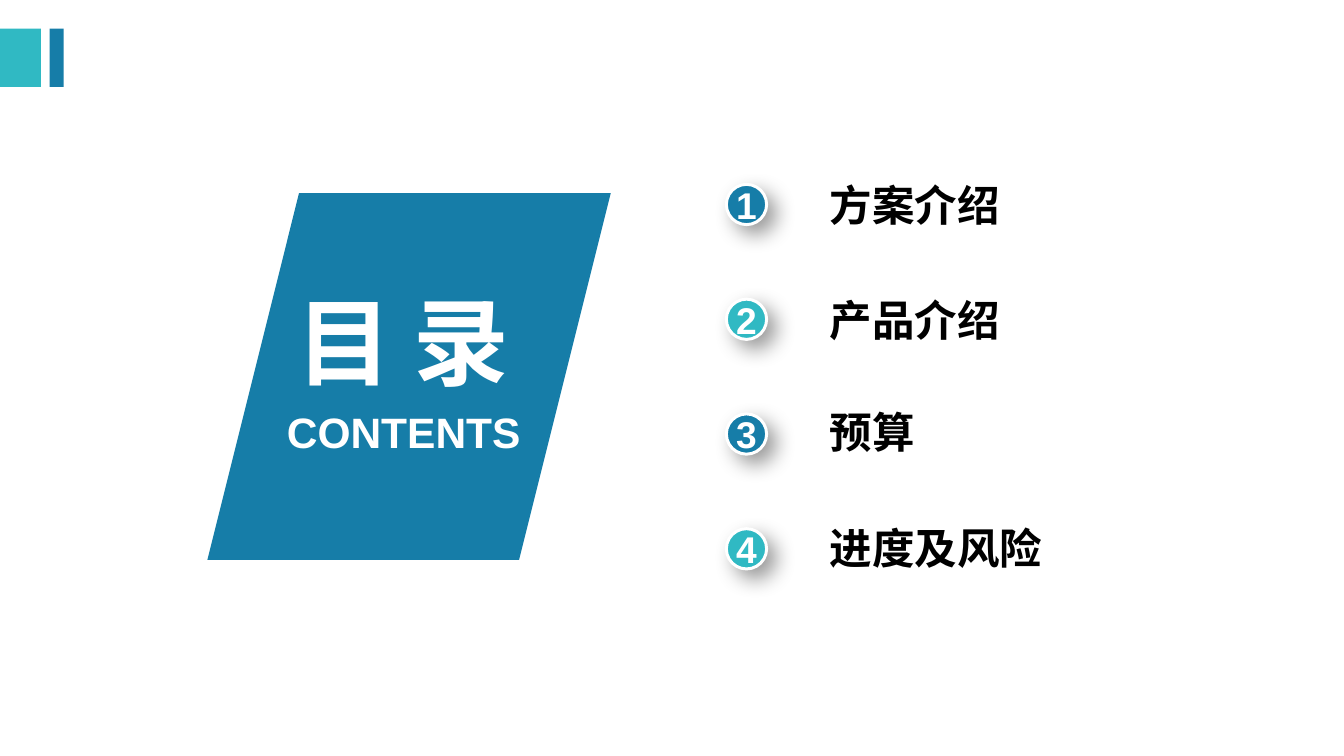
from dataclasses import dataclass

from lxml import etree
from pptx import Presentation
from pptx.dml.color import RGBColor
from pptx.enum.lang import MSO_LANGUAGE_ID
from pptx.enum.shapes import MSO_SHAPE
from pptx.enum.text import MSO_ANCHOR, MSO_AUTO_SIZE, PP_ALIGN
from pptx.oxml.ns import qn
from pptx.util import Cm, Pt

RECT = MSO_SHAPE.RECTANGLE
SLANT = MSO_SHAPE.PARALLELOGRAM
OVAL = MSO_SHAPE.OVAL
MIDDLE = MSO_ANCHOR.MIDDLE
FIT = MSO_AUTO_SIZE.SHAPE_TO_FIT_TEXT
LEFT = PP_ALIGN.LEFT
CENTER = PP_ALIGN.CENTER
CHINESE = MSO_LANGUAGE_ID.SIMPLIFIED_CHINESE


@dataclass(frozen=True)
class Theme:
    blue: str = "167DA8"
    teal: str = "30B9C3"
    white: str = "FFFFFF"
    black: str = "000000"
    font: str = "Arial"
    title: int = 72
    label: int = 32
    digit: int = 28
    rim: float = 2.25


THEME = Theme()
ITEMS = [
    ("方案介绍", 4.75, 9.83),
    ("产品介绍", 7.8, 7.29),
    ("预算", 10.77, 7.29),
    ("进度及风险", 13.87, 7.29),
]


def place(box):
    return [Cm(side) for side in box]


def write(shape, text, size, color, align):
    frame = shape.text_frame
    frame.text = text
    frame.word_wrap = True
    frame.vertical_anchor = MIDDLE
    frame.margin_left = frame.margin_right = 0
    frame.margin_top = frame.margin_bottom = 0
    line = frame.paragraphs[0]
    line.alignment = align
    font = line.runs[0].font
    font.name = THEME.font
    font.size = Pt(size)
    font.bold = True
    font.color.rgb = RGBColor.from_string(color)
    font.language_id = CHINESE


def add_block(slide, kind, box, color):
    block = slide.shapes.add_shape(kind, *place(box))
    block.shadow.inherit = False
    block.fill.solid()
    block.fill.fore_color.rgb = RGBColor.from_string(color)
    block.line.fill.background()
    return block


def add_label(slide, box, text, size, color, align):
    label = slide.shapes.add_textbox(*place(box))
    write(label, text, size, color, align)
    label.text_frame.auto_size = FIT


def add_shade(shape):
    effects = shape._element.spPr.find(qn("a:effectLst"))
    shade = etree.SubElement(
        effects, qn("a:outerShdw"), blurRad=str(Pt(16)), dist=str(Pt(9)),
        dir="2700000", algn="tl", rotWithShape="0")
    color = etree.SubElement(shade, qn("a:srgbClr"), val=THEME.black)
    etree.SubElement(color, qn("a:alpha"), val="40000")


def add_badge(slide, box, text, color):
    badge = add_block(slide, OVAL, box, color)
    badge.line.color.rgb = RGBColor.from_string(THEME.white)
    badge.line.width = Pt(THEME.rim)
    add_shade(badge)
    write(badge, text, THEME.digit, THEME.white, CENTER)


def add_items(slide):
    fills = (THEME.blue, THEME.teal)
    for row, (text, top, width) in enumerate(ITEMS):
        spot = (19.3, 4.9 + 3.05 * row, 1.07, 1.07)
        add_badge(slide, spot, str(row + 1), fills[row % 2])
        add_label(slide, (22.05, top, width, 1.37), text,
                  THEME.label, THEME.black, LEFT)


def main():
    deck = Presentation()
    deck.slide_width = Cm(35.71)
    deck.slide_height = Cm(20.09)
    slide = deck.slides.add_slide(deck.slide_layouts[6])

    add_block(slide, RECT, (0, 0.76, 1.09, 1.55), THEME.teal)
    add_block(slide, RECT, (1.32, 0.76, 0.37, 1.55), THEME.blue)
    add_block(slide, SLANT, (5.51, 5.13, 10.72, 9.75), THEME.blue)
    add_label(slide, (7.06, 7.52, 7.29, 3.07), "目 录",
              THEME.title, THEME.white, CENTER)
    add_label(slide, (7.49, 10.77, 6.48, 1.37), "CONTENTS",
              THEME.label, THEME.white, CENTER)
    add_items(slide)

    deck.save("out.pptx")


if __name__ == "__main__":
    main()
